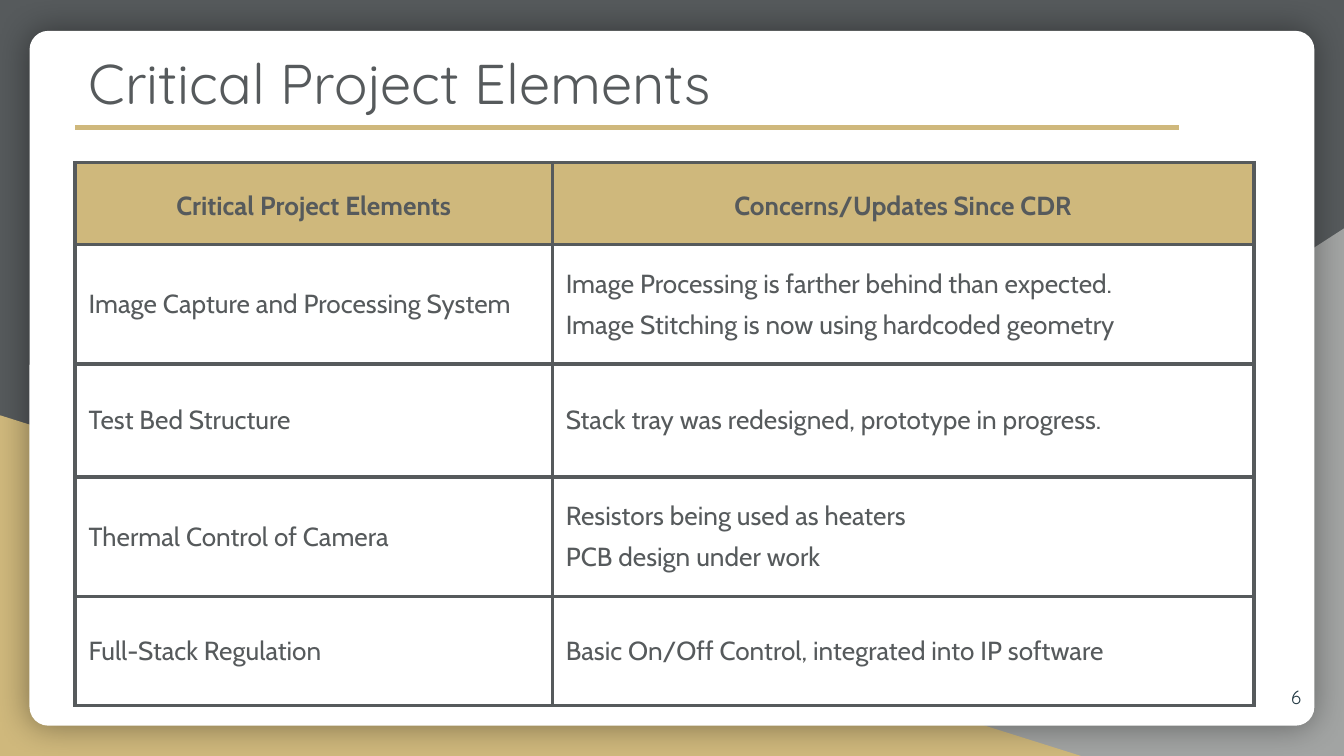
from dataclasses import dataclass

from pptx import Presentation
from pptx.dml.color import RGBColor
from pptx.enum import shapes, text
from pptx.oxml import parse_xml
from pptx.oxml.ns import nsdecls, qn
from pptx.util import Inches, Pt

SLATE = RGBColor(0x56, 0x5A, 0x5C)
GOLD = RGBColor(0xCF, 0xB8, 0x7C)
GRAY = RGBColor(0xA2, 0xA4, 0xA3)
WHITE = RGBColor(0xFF, 0xFF, 0xFF)
NAVY = RGBColor(0x23, 0x3A, 0x44)

LEFT = 0.56
RULE_WIDTH, RULE_TOP = 8.21, 0.95
TABLE_TOP = 1.21
COLUMN_WIDTHS = (3.55, 5.22)
MARGIN = Inches(0.1)


@dataclass(frozen=True)
class Panel:
    preset: shapes.MSO_SHAPE
    left: float
    top: float
    width: float
    height: float
    color: RGBColor
    flipped: bool = False


@dataclass(frozen=True)
class Row:
    height: float
    element: str
    updates: tuple[str, ...]
    header: bool = False


TRIANGLES = (
    Panel(shapes.MSO_SHAPE.RIGHT_TRIANGLE, 3.92, 1.7, 6.08, 3.93, GRAY, True),
    Panel(shapes.MSO_SHAPE.RIGHT_TRIANGLE, 0, 3.09, 8.06, 2.54, GOLD),
)
CARD = Panel(shapes.MSO_SHAPE.ROUNDED_RECTANGLE, 0.22, 0.23, 9.56, 5.17, WHITE)

ROWS = (
    Row(0.61, "Critical Project Elements", ("Concerns/Updates Since CDR",), True),
    Row(0.89, "Image Capture and Processing System",
        ("Image Processing is farther behind than expected.",
         "Image Stitching is now using hardcoded geometry")),
    Row(0.84, "Test Bed Structure",
        ("Stack tray was redesigned, prototype in progress.",)),
    Row(0.89, "Thermal Control of Camera",
        ("Resistors being used as heaters", "PCB design under work")),
    Row(0.81, "Full-Stack Regulation",
        ("Basic On/Off Control, integrated into IP software",)),
)


def style(paragraph, face: str, size: float, color: RGBColor, bold: bool = False) -> None:
    font = paragraph.font
    font.name, font.size, font.bold = face, Pt(size), bold
    font.color.rgb = color


def set_margins(box) -> None:
    box.margin_left = box.margin_right = MARGIN
    box.margin_top = box.margin_bottom = MARGIN


def draw_panel(slide, panel: Panel):
    shape = slide.shapes.add_shape(
        panel.preset, Inches(panel.left), Inches(panel.top),
        Inches(panel.width), Inches(panel.height))
    shape.shadow.inherit = False
    shape.fill.solid()
    shape.fill.fore_color.rgb = panel.color
    shape.line.fill.background()
    if panel.flipped:
        shape._element.spPr.xfrm.set("flipH", "1")
    return shape


def draw_card(slide) -> None:
    card = draw_panel(slide, CARD)
    card.adjustments[0] = 0.027
    card._element.spPr.find(qn("a:effectLst")).append(parse_xml(
        f'<a:outerShdw {nsdecls("a")} blurRad="{Pt(18)}" dist="0" dir="0" '
        'algn="ctr" rotWithShape="0"><a:srgbClr val="000000">'
        '<a:alpha val="40000"/></a:srgbClr></a:outerShdw>'))


def draw_title(slide) -> None:
    title = slide.shapes.title
    slide.shapes._spTree.append(title._element)
    title.left, title.top = Inches(LEFT), Inches(0.26)
    title.width, title.height = Inches(RULE_WIDTH), Inches(0.69)
    frame = title.text_frame
    frame.text = "Critical Project Elements"
    frame.auto_size = text.MSO_AUTO_SIZE.NONE
    frame.vertical_anchor = text.MSO_ANCHOR.TOP
    set_margins(frame)
    frame.paragraphs[0].alignment = text.PP_ALIGN.LEFT
    style(frame.paragraphs[0], "Quicksand", 30, SLATE)


def draw_rule(slide) -> None:
    rule = slide.shapes.add_connector(
        shapes.MSO_CONNECTOR.STRAIGHT, Inches(LEFT), Inches(RULE_TOP),
        Inches(LEFT + RULE_WIDTH), Inches(RULE_TOP))
    rule.line.color.rgb = GOLD
    rule.line.width = Pt(3)
    rule._element.spPr.append(parse_xml(f'<a:effectLst {nsdecls("a")}/>'))


def draw_page_number(slide) -> None:
    box = slide.shapes.add_textbox(Inches(9.18), Inches(4.97), Inches(0.6), Inches(0.43))
    frame = box.text_frame
    frame.word_wrap = True
    frame.vertical_anchor = text.MSO_ANCHOR.MIDDLE
    set_margins(frame)
    frame.text = "6"
    frame.paragraphs[0].alignment = text.PP_ALIGN.RIGHT
    style(frame.paragraphs[0], "Quicksand", 10, NAVY)


def add_borders(cell) -> None:
    properties = cell._tc.get_or_add_tcPr()
    for side in ("lnL", "lnR", "lnT", "lnB"):
        properties.append(parse_xml(
            f'<a:{side} {nsdecls("a")} w="{Pt(2.25)}"><a:solidFill>'
            f'<a:srgbClr val="{SLATE}"/></a:solidFill></a:{side}>'))


def fill_cell(cell, lines: tuple[str, ...], header: bool) -> None:
    add_borders(cell)
    if header:
        cell.fill.solid()
        cell.fill.fore_color.rgb = GOLD
    else:
        cell.fill.background()
    cell.vertical_anchor = text.MSO_ANCHOR.MIDDLE
    set_margins(cell)
    cell.text_frame.text = "\n".join(lines)
    paragraphs = cell.text_frame.paragraphs
    for paragraph in paragraphs:
        style(paragraph, "Cabin", 14, SLATE, header)
        if header:
            paragraph.alignment = text.PP_ALIGN.CENTER
            paragraph.line_spacing = 1.14
    for paragraph in paragraphs[1:]:
        paragraph.space_before = Pt(5)
    paragraphs[-1].space_after = Pt(5)


def draw_table(slide) -> None:
    table = slide.shapes.add_table(
        len(ROWS), len(COLUMN_WIDTHS), Inches(LEFT), Inches(TABLE_TOP),
        Inches(sum(COLUMN_WIDTHS)), Inches(sum(row.height for row in ROWS))).table
    table.horz_banding = False
    for column, width in zip(table.columns, COLUMN_WIDTHS):
        column.width = Inches(width)
    for index, row in enumerate(ROWS):
        table.rows[index].height = Inches(row.height)
        fill_cell(table.cell(index, 0), (row.element,), row.header)
        fill_cell(table.cell(index, 1), row.updates, row.header)


def main() -> None:
    deck = Presentation()
    deck.slide_width = Inches(10)
    deck.slide_height = deck.slide_width * 9 // 16
    slide = deck.slides.add_slide(deck.slide_layouts[5])
    slide.background.fill.solid()
    slide.background.fill.fore_color.rgb = SLATE
    for triangle in TRIANGLES:
        draw_panel(slide, triangle)
    draw_card(slide)
    draw_rule(slide)
    draw_title(slide)
    draw_page_number(slide)
    draw_table(slide)
    deck.save("out.pptx")


if __name__ == "__main__":
    main()
